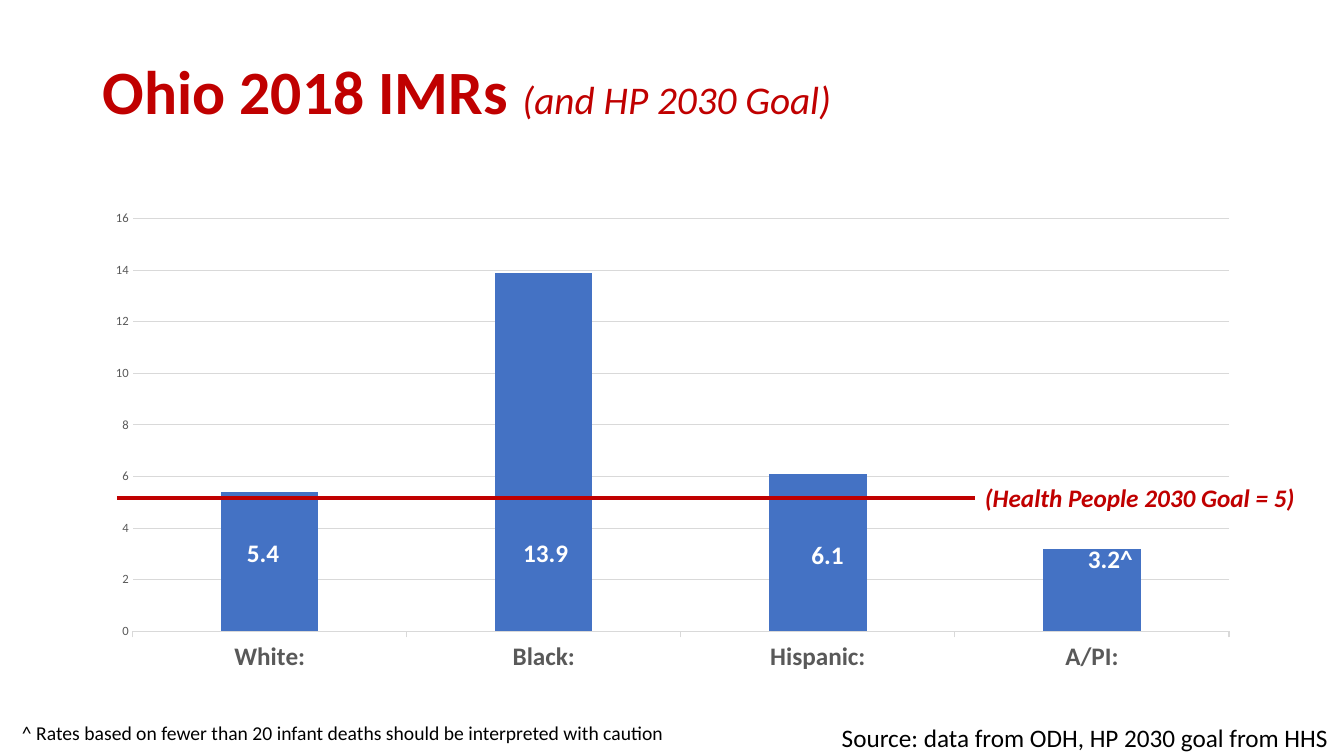
from lxml import etree
from pptx import Presentation
from pptx import util as u
from pptx.chart import data
from pptx.dml.color import RGBColor
from pptx.enum import chart as ch, shapes, text
from pptx.oxml import ns

RED = RGBColor(0xC0, 0x00, 0x00)
BLUE = RGBColor(0x44, 0x72, 0xC4)
GREY = RGBColor(0x59, 0x59, 0x59)
PALE = RGBColor(0xD9, 0xD9, 0xD9)
BLACK = RGBColor(0, 0, 0)
WHITE = RGBColor(0xFF, 0xFF, 0xFF)


def style(font, size, color, bold=False, italic=False):
    font.name = "Calibri"
    font.size = u.Pt(size)
    font.color.rgb = color
    font.bold = bold
    font.italic = italic


prs = Presentation()
prs.slide_width = u.Inches(13.33)
prs.slide_height = u.Inches(7.5)
slide = prs.slides.add_slide(prs.slide_layouts[5])

title = slide.shapes.title
title.left, title.top = u.Inches(0.92), u.Inches(0.21)
title.width, title.height = u.Inches(11.5), u.Inches(1.45)
frame = title.text_frame
frame.vertical_anchor = text.MSO_ANCHOR.MIDDLE
para = frame.paragraphs[0]
para.alignment = text.PP_ALIGN.LEFT
para.line_spacing = 0.9
for words, size, bold in [("Ohio 2018 IMRs ", 44, True), ("(and HP 2030 Goal)", 28, False)]:
    run = para.add_run()
    run.text = words
    style(run.font, size, RED, bold, not bold)

rates = data.CategoryChartData()
rates.categories = ["White:", "Black:", "Hispanic:", "A/PI:"]
rates.add_series("Series 1", [5.4, 13.9, 6.1, 3.2])
chart = slide.shapes.add_chart(
    ch.XL_CHART_TYPE.COLUMN_CLUSTERED, u.Inches(0.92), u.Inches(2),
    u.Inches(11.5), u.Inches(4.76), rates).chart
style(chart.font, 10, BLACK)
chart.has_legend = False
chart.has_title = False
plot = chart.plots[0]
plot.gap_width = 182
plot.vary_by_categories = False
fill = plot.series[0].format.fill
fill.solid()
fill.fore_color.rgb = BLUE

groups = chart.category_axis
style(groups.tick_labels.font, 18, GREY, True)
scale = chart.value_axis
style(scale.tick_labels.font, 9, GREY)
scale.minimum_scale, scale.maximum_scale, scale.major_unit = 0, 16, 2
scale.major_tick_mark = ch.XL_TICK_MARK.NONE
scale.format.line.fill.background()
for line in (groups.format.line, scale.major_gridlines.format.line):
    line.color.rgb = PALE
    line.width = u.Pt(0.75)

goal = slide.shapes.add_connector(
    shapes.MSO_CONNECTOR.STRAIGHT, u.Inches(1.16), u.Inches(4.94), u.Inches(9.67), u.Inches(4.94))
goal.line.color.rgb = RED
goal.line.width = u.Pt(2.5)
etree.SubElement(goal.element.spPr, ns.qn("a:effectLst"))

notes = [
    ("Source: data from ODH, HP 2030 goal from HHS", 8.25, 7.12, 5.08, 0.4, 18, BLACK, False, False),
    ("(Health People 2030 Goal = 5)", 9.67, 4.74, 3.31, 0.4, 18, RED, True, True),
    ("5.4", 2.35, 5.28, 0.52, 0.4, 18, WHITE, True, False),
    ("13.9", 5.09, 5.28, 0.65, 0.4, 18, WHITE, True, False),
    ("6.1", 7.95, 5.3, 0.52, 0.4, 18, WHITE, True, False),
    ("3.2^", 10.69, 5.34, 0.65, 0.4, 18, WHITE, True, False),
    ("^ Rates based on fewer than 20 infant deaths should be interpreted with caution",
     0.12, 7.1, 6.63, 0.34, 14, BLACK, False, False),
]
for words, left, top, width, height, size, color, bold, italic in notes:
    box = slide.shapes.add_textbox(u.Inches(left), u.Inches(top), u.Inches(width), u.Inches(height))
    frame = box.text_frame
    frame.word_wrap = False
    frame.auto_size = text.MSO_AUTO_SIZE.SHAPE_TO_FIT_TEXT
    frame.text = words
    style(frame.paragraphs[0].runs[0].font, size, color, bold, italic)

prs.save("out.pptx")
